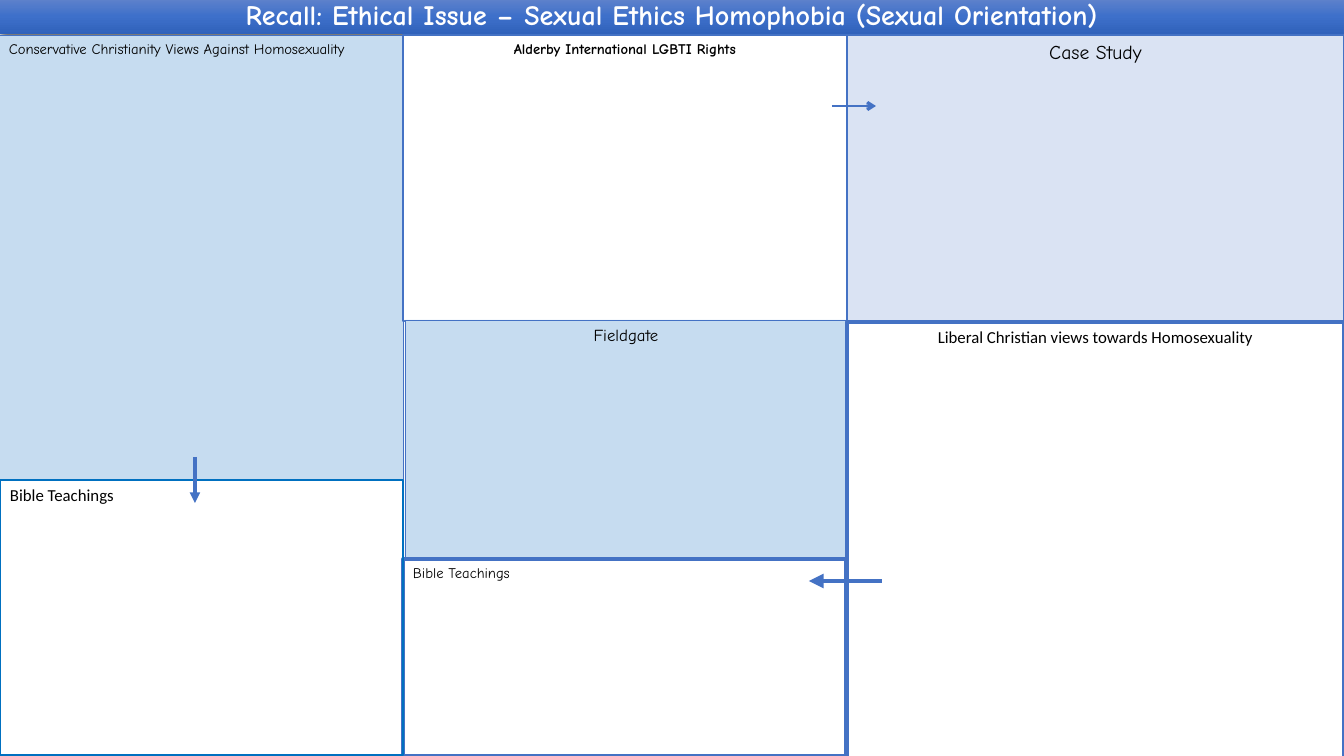
import pptx
import pptx.dml.color
import pptx.enum.shapes
import pptx.enum.text
import pptx.oxml
import pptx.oxml.ns
import pptx.util
from lxml import etree

EMU_PER_PX = 914400 / 100.8
COLOURS = {
    "text": "000000",
    "title": "FFFFFF",
    "white": "FFFFFF",
    "sky": "C6DCF0",
    "lavender": "DAE3F3",
    "border": "4472C4",
    "teachings": "0070C0",
}
TITLE_GRADIENT = [(0, "6183CB"), (50, "3E70CA"), (100, "3062BB")]
CENTRE = pptx.enum.text.PP_ALIGN.CENTER
LEFT = pptx.enum.text.PP_ALIGN.LEFT
TOP = pptx.enum.text.MSO_ANCHOR.TOP
MIDDLE = pptx.enum.text.MSO_ANCHOR.MIDDLE


def px(length):
    return pptx.util.Emu(round(length * EMU_PER_PX))


def colour(name):
    return pptx.dml.color.RGBColor.from_string(COLOURS[name])


def write_text(shape, text, *, size, font="Comic Neue", ink="text", bold=False,
               align=LEFT, anchor=TOP, spacing=1.0):
    frame = shape.text_frame
    frame.word_wrap = True
    frame.auto_size = pptx.enum.text.MSO_AUTO_SIZE.NONE
    frame.vertical_anchor = anchor
    paragraph = frame.paragraphs[0]
    paragraph.alignment = align
    paragraph.line_spacing = spacing
    run = paragraph.add_run()
    run.text = text
    run.font.name = font
    run.font.size = pptx.util.Pt(size)
    run.font.bold = bold
    run.font.color.rgb = colour(ink)


class RecallSheet:
    """Holds the slide and the shared look of its panels and arrows."""

    def __init__(self, slide):
        self.slide = slide

    def title(self, box, text):
        banner = self.slide.shapes.title
        banner.left, banner.top, banner.width, banner.height = map(px, box)
        stops = "".join(
            f'<a:gs pos="{position * 1000}"><a:srgbClr val="{shade}"/></a:gs>'
            for position, shade in TITLE_GRADIENT)
        namespace = pptx.oxml.ns.nsdecls("a")
        properties = banner.element.spPr
        properties.append(pptx.oxml.parse_xml(
            f'<a:gradFill {namespace} rotWithShape="1"><a:gsLst>{stops}</a:gsLst>'
            '<a:lin ang="5400000" scaled="0"/></a:gradFill>'))
        properties.append(pptx.oxml.parse_xml(
            f'<a:effectLst {namespace}>'
            '<a:outerShdw blurRad="57150" dist="19050" dir="5400000">'
            '<a:srgbClr val="000000"><a:alpha val="63000"/></a:srgbClr>'
            '</a:outerShdw></a:effectLst>'))
        write_text(banner, text, size=20, ink="title", bold=True,
                   align=CENTRE, anchor=MIDDLE, spacing=0.9)

    def panel(self, box, heading, *, fill=None, border="border", weight, **text_format):
        panel = self.slide.shapes.add_shape(
            pptx.enum.shapes.MSO_SHAPE.RECTANGLE, *map(px, box))
        panel.shadow.inherit = False
        if fill:
            panel.fill.solid()
            panel.fill.fore_color.rgb = colour(fill)
        else:
            panel.fill.background()
        panel.line.color.rgb = colour(border)
        panel.line.width = pptx.util.Pt(weight)
        write_text(panel, heading, **text_format)

    def arrow(self, start, end, *, weight, head="triangle"):
        arrow = self.slide.shapes.add_connector(
            pptx.enum.shapes.MSO_CONNECTOR.STRAIGHT, *map(px, (*start, *end)))
        arrow.line.color.rgb = colour("border")
        arrow.line.width = pptx.util.Pt(weight)
        qn = pptx.oxml.ns.qn
        properties = arrow.element.spPr
        etree.SubElement(properties.find(qn("a:ln")), qn("a:tailEnd"), type=head)
        etree.SubElement(properties, qn("a:effectLst"))


def main():
    deck = pptx.Presentation()
    deck.slide_width, deck.slide_height = px(1344), px(756)
    sheet = RecallSheet(deck.slides.add_slide(deck.slide_layouts[5]))

    sheet.title((0, -2, 1344, 36),
                "Recall: Ethical Issue – Sexual Ethics Homophobia (Sexual Orientation)")
    sheet.panel((-1, 35, 404, 445), "Conservative Christianity Views Against Homosexuality",
                fill="sky", weight=0.5, size=10.5)
    sheet.panel((403, 35, 444, 286), "Alderby International LGBTI Rights",
                fill="white", weight=1, size=10.5, bold=True, align=CENTRE)
    sheet.panel((405, 320, 442, 238), "Fieldgate",
                fill="sky", weight=0.5, size=12, align=CENTRE)
    sheet.panel((403, 559, 443, 197), "Bible Teachings",
                fill="white", weight=2.25, size=10.5)
    sheet.panel((847, 35, 497, 286), "Case Study",
                fill="lavender", weight=1, size=14, align=CENTRE)
    sheet.arrow((832, 106), (876, 106), weight=2, head="arrow")
    sheet.panel((0, 480, 403, 275), "Bible Teachings",
                border="teachings", weight=1.5, size=12, font="Calibri")
    sheet.panel((847, 322, 497, 437), "Liberal Christian views towards Homosexuality",
                weight=2.25, size=12, font="Calibri", align=CENTRE)
    sheet.arrow((882, 581), (809, 581), weight=3.5)
    sheet.arrow((195, 457), (195, 503), weight=2.5)

    deck.save("out.pptx")


if __name__ == "__main__":
    main()
